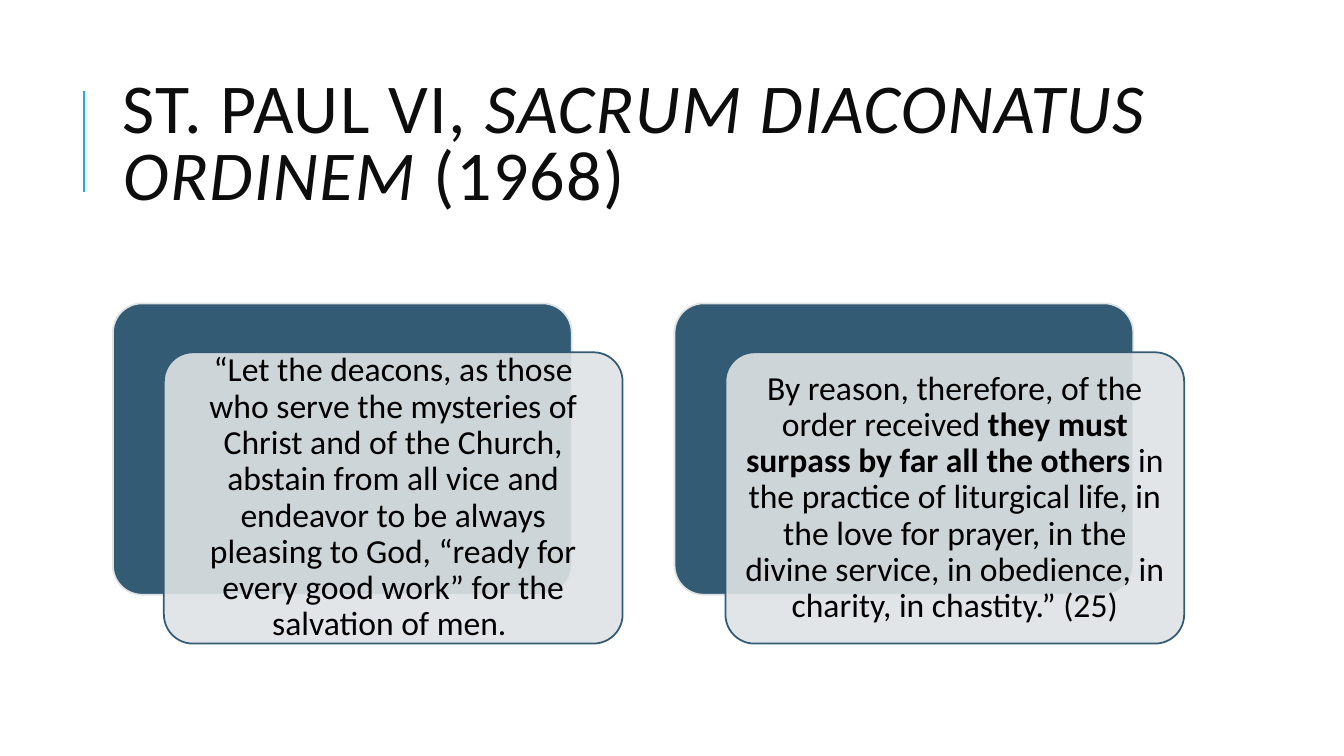
from lxml.etree import SubElement
from pptx import Presentation
from pptx.dml.color import RGBColor
from pptx.enum.shapes import MSO_CONNECTOR as Connector, MSO_SHAPE as Shape
from pptx.enum.text import MSO_ANCHOR as Anchor, PP_ALIGN as Align
from pptx.oxml.ns import qn
from pptx.util import Inches, Pt

COLORS = {
    "accent": "1CADE4",
    "title": "0D0D0D",
    "navy": "335B74",
    "mist": "DFE3E5",
    "text": "000000",
}
FONT = "Calibri"
CARD_WIDTH, CARD_HEIGHT = 4.55, 2.89
CARD_TOP = 3.01
CARD_LEFTS = (1.12, 6.69)
FRONT_SHIFT_X, FRONT_SHIFT_Y = 0.505, 0.485
TEXT_INSET = 0.085

TITLE = [
    ("ST. PAUL VI, ", {}),
    ("SACRUM DIACONATUS ORDINEM ", {"italic": True}),
    ("(1968)", {}),
]
QUOTES = [
    [
        ("“Let the deacons, as those who serve the mysteries of Christ and of "
         "the Church, abstain from all vice and endeavor to be always pleasing "
         "to God, “ready for every good work” for the salvation of men. ", {}),
    ],
    [
        ("By reason, therefore, of the order received ", {}),
        ("they must surpass by far all the others", {"bold": True}),
        (" in the practice of liturgical life, in the love for prayer, in the "
         "divine service, in obedience, in charity, in chastity.” (25)", {}),
    ],
]


def rgb(name):
    """Return the named palette colour."""
    return RGBColor.from_string(COLORS[name])


def add_rule(page, x, top, bottom):
    """Draw the vertical accent line beside the title."""
    rule = page.shapes.add_connector(
        Connector.STRAIGHT, Inches(x), Inches(bottom), Inches(x), Inches(top))
    rule.line.color.rgb = rgb("accent")
    rule.line.width = Pt(1.5)
    SubElement(rule._element.spPr, qn("a:effectLst"))


def add_text(page, left, top, width, height, spans, size, color,
             line_spacing, align=Align.LEFT, inset_y=0.05, tracking=0):
    """Add a vertically centred paragraph made of styled runs."""
    box = page.shapes.add_textbox(
        Inches(left), Inches(top), Inches(width), Inches(height))
    frame = box.text_frame
    frame.word_wrap = True
    frame.vertical_anchor = Anchor.MIDDLE
    frame.margin_left = frame.margin_right = Inches(0.1)
    frame.margin_top = frame.margin_bottom = Inches(inset_y)
    para = frame.paragraphs[0]
    para.alignment = align
    para.line_spacing = line_spacing
    for text, style in spans:
        span = para.add_run()
        span.text = text
        font = span.font
        font.name, font.size = FONT, Pt(size)
        font.color.rgb = rgb(color)
        font.bold = style.get("bold", False)
        font.italic = style.get("italic", False)
        if tracking:
            span._r.get_or_add_rPr().set("spc", str(tracking * 100))


def add_panel(page, left, top, fill, line, opacity=100):
    """Add one rounded panel of a card."""
    panel = page.shapes.add_shape(
        Shape.ROUNDED_RECTANGLE, Inches(left), Inches(top),
        Inches(CARD_WIDTH), Inches(CARD_HEIGHT))
    panel.adjustments[0] = 0.1
    panel.shadow.inherit = False
    panel.fill.solid()
    panel.fill.fore_color.rgb = rgb(fill)
    panel.line.color.rgb = rgb(line)
    panel.line.width = Pt(1.25)
    if opacity < 100:
        tint = panel._element.spPr.find(qn("a:solidFill"))[0]
        SubElement(tint, qn("a:alpha"), val=str(opacity * 1000))


def add_quote_card(page, left, spans):
    """Add a dark panel, its translucent front panel and the quotation."""
    front_left, front_top = left + FRONT_SHIFT_X, CARD_TOP + FRONT_SHIFT_Y
    add_panel(page, left, CARD_TOP, "navy", "mist")
    add_panel(page, front_left, front_top, "mist", "navy", opacity=90)
    add_text(page, front_left + TEXT_INSET, front_top + TEXT_INSET,
             CARD_WIDTH - 2 * TEXT_INSET, CARD_HEIGHT - 2 * TEXT_INSET,
             spans, 24, "text", 0.9, Align.CENTER, inset_y=0.1)


def main():
    """Build and save the slide."""
    deck = Presentation()
    deck.slide_width, deck.slide_height = Inches(13.33), Inches(7.5)
    page = deck.slides.add_slide(deck.slide_layouts[6])
    add_rule(page, 0.83, 0.9, 1.9)
    add_text(page, 1.12, 0.64, 10.63, 1.64, TITLE, 50, "title", 0.8, tracking=1)
    for left, spans in zip(CARD_LEFTS, QUOTES):
        add_quote_card(page, left, spans)
    deck.save("out.pptx")


if __name__ == "__main__":
    main()
